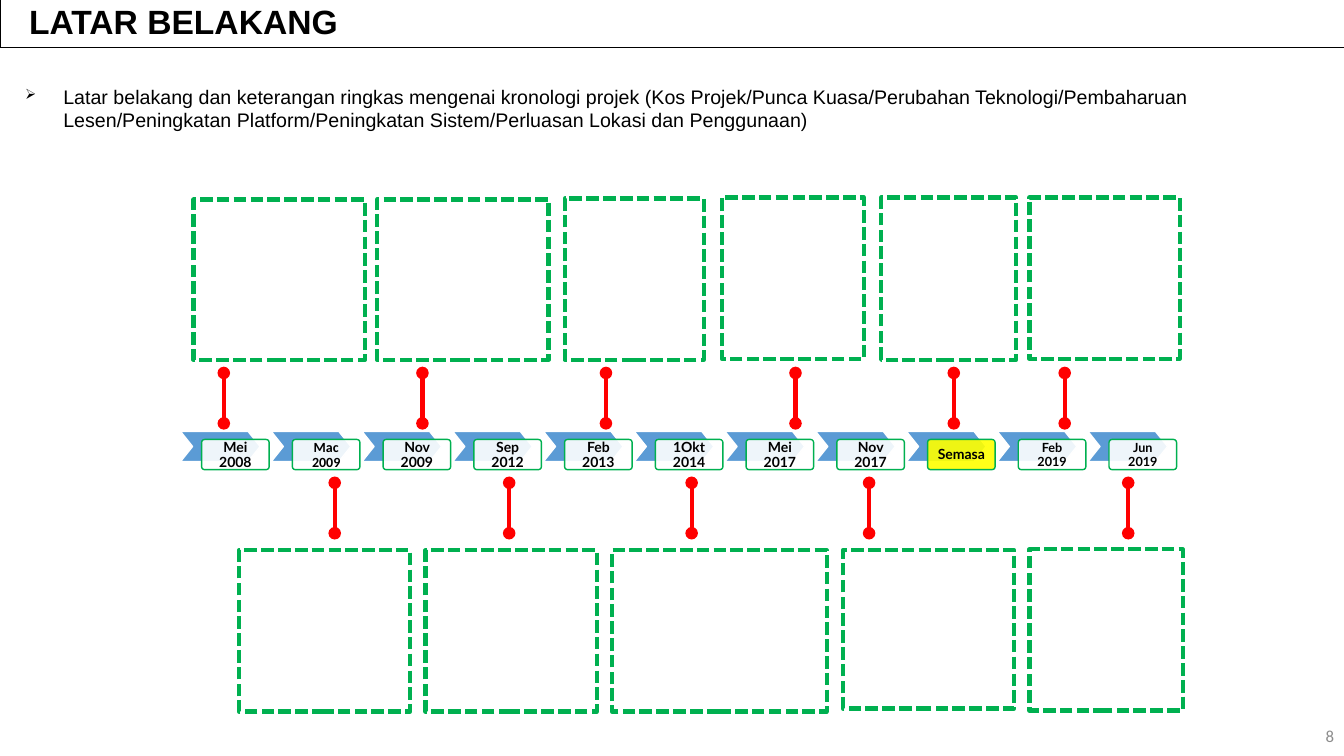
from dataclasses import dataclass
from lxml import etree
from pptx import Presentation
from pptx.dml.color import RGBColor as RGB
from pptx.enum.dml import MSO_LINE
from pptx.enum.shapes import MSO_CONNECTOR, MSO_SHAPE
from pptx.enum.text import MSO_ANCHOR as ANCHOR, PP_ALIGN as ALIGN
from pptx.oxml.ns import qn
from pptx.util import Inches, Pt


@dataclass(frozen=True)
class Theme:
    ink: str = "000000"
    paper: str = "FFFFFF"
    chevron: str = "5B9BD5"
    frame: str = "00B050"
    pin: str = "FF0000"
    current: str = "FFFF00"
    muted: str = "8C8C8C"
    heading: str = "Arial"
    label: str = "Lato"
    plain: str = "Calibri"
    title_size: int = 24
    body_size: int = 14
    number_size: int = 12
    step_size: int = 10
    late_size: int = 9


T = Theme()

STEPS = [
    ("Mei 2008", T.label, T.step_size, T.paper),
    ("Mac 2009", T.plain, T.step_size, T.paper),
    ("Nov 2009", T.label, T.step_size, T.paper),
    ("Sep 2012", T.label, T.step_size, T.paper),
    ("Feb 2013", T.label, T.step_size, T.paper),
    ("1Okt 2014", T.label, T.step_size, T.paper),
    ("Mei 2017", T.label, T.step_size, T.paper),
    ("Nov 2017", T.label, T.step_size, T.paper),
    ("Semasa", T.label, T.step_size, T.current),
    ("Feb 2019", T.label, T.late_size, T.paper),
    ("Jun 2019", T.label, T.late_size, T.paper),
]
UPPER_PINS = [2.22, 4.19, 6.01, 7.89, 9.46, 10.56]
LOWER_PINS = [3.32, 5.05, 6.86, 8.62, 11.19]
UPPER_FRAMES = [
    (1.92, 1.98, 1.7, 1.59), (3.74, 1.98, 1.7, 1.59), (5.6, 1.97, 1.38, 1.6),
    (7.16, 1.96, 1.41, 1.6), (8.74, 1.96, 1.34, 1.61), (10.21, 1.96, 1.49, 1.6),
]
LOWER_FRAMES = [
    (2.37, 5.46, 1.7, 1.6), (4.22, 5.46, 1.7, 1.6), (6.07, 5.46, 2.13, 1.6),
    (8.36, 5.46, 1.7, 1.57), (10.21, 5.45, 1.52, 1.6),
]
SUMMARY = (
    "Latar belakang dan keterangan ringkas mengenai kronologi projek "
    "(Kos Projek/Punca Kuasa/Perubahan Teknologi/Pembaharuan "
    "Lesen/Peningkatan Platform/Peningkatan Sistem/Perluasan Lokasi dan Penggunaan)"
)


def add_box(shapes, kind, box, line, width, fill=None):
    sp = shapes.add_shape(kind, *map(Inches, box))
    sp.shadow.inherit = False
    sp.line.color.rgb = RGB.from_string(line)
    sp.line.width = Pt(width)
    if fill:
        sp.fill.solid()
        sp.fill.fore_color.rgb = RGB.from_string(fill)
    else:
        sp.fill.background()
    return sp


def write(sp, text, font, size, color, bold=False, align=ALIGN.LEFT, anchor=ANCHOR.MIDDLE):
    tf = sp.text_frame
    tf.word_wrap = True
    tf.vertical_anchor = anchor
    p = tf.paragraphs[0]
    p.text = text
    p.alignment = align
    f = p.runs[0].font
    f.name, f.size, f.bold = font, Pt(size), bold
    f.color.rgb = RGB.from_string(color)
    return p


def add_text(shapes, box, *args, **kwargs):
    sp = shapes.add_textbox(*map(Inches, box))
    return sp, write(sp, *args, **kwargs)


def set_indent(p, margin, first):
    pPr = p._p.get_or_add_pPr()
    pPr.set("marL", str(Inches(margin)))
    pPr.set("indent", str(Inches(first)))
    return pPr


def add_title(s, box):
    sp = add_box(s.shapes, MSO_SHAPE.RECTANGLE, box, T.ink, 0.75)
    p = write(sp, "LATAR BELAKANG", T.heading, T.title_size, T.ink, bold=True)
    p.line_spacing = 0.9
    set_indent(p, 0.19, 0)


def add_summary(s, box):
    sp, p = add_text(s.shapes, box, SUMMARY, T.heading, T.body_size, T.ink, anchor=ANCHOR.TOP)
    p.space_before = Pt(2.8)
    pPr = set_indent(p, 0.38, -0.38)
    color = etree.SubElement(pPr, qn("a:buClr"))
    etree.SubElement(color, qn("a:srgbClr"), val=T.ink)
    etree.SubElement(pPr, qn("a:buSzPct"), val="73000")
    etree.SubElement(pPr, qn("a:buChar"), char="➢")


def add_step(shapes, box, text, font, size, fill):
    x, y, w, h = box
    chevron = add_box(shapes, MSO_SHAPE.CHEVRON, box, T.paper, 1, T.chevron)
    chevron.adjustments[0] = 0.4
    card = add_box(shapes, MSO_SHAPE.ROUNDED_RECTANGLE,
                   (x + 0.21, y + 0.08, 0.67, h), T.frame, 1, fill)
    card.adjustments[0] = 0.1
    color = card.fill._xPr.find(".//" + qn("a:srgbClr"))
    etree.SubElement(color, qn("a:alpha"), val="90000")
    sp, p = add_text(shapes, (x + 0.22, y + 0.09, 0.65, 0.29), text, font, size, T.ink,
                     bold=True, align=ALIGN.CENTER)
    tf = sp.text_frame
    tf.margin_left = tf.margin_right = tf.margin_top = tf.margin_bottom = Inches(0.07)
    p.line_spacing = 0.9
    p.space_after = Pt(size * 0.35)


def add_timeline(s, box, pitch=0.9, chevron_width=0.79):
    x, y, w, h = box
    group = s.shapes.add_group_shape()
    for i, step in enumerate(STEPS):
        add_step(group.shapes, (x + i * pitch, y, chevron_width, h), *step)


def add_pins(s, xs, top, length=0.5):
    for x in xs:
        pin = s.shapes.add_connector(MSO_CONNECTOR.STRAIGHT, Inches(x), Inches(top),
                                     Inches(x), Inches(top + length))
        pin.line.color.rgb = RGB.from_string(T.pin)
        pin.line.width = Pt(3)
        ln = pin.line._get_or_add_ln()
        for end in ("a:headEnd", "a:tailEnd"):
            etree.SubElement(ln, qn(end), type="oval")
        etree.SubElement(pin._element.spPr, qn("a:effectLst"))


def add_frames(s, boxes):
    for box in boxes:
        sp = add_box(s.shapes, MSO_SHAPE.RECTANGLE, box, T.frame, 3)
        sp.line.dash_style = MSO_LINE.SQUARE_DOT


def add_slide_number(s, box):
    add_text(s.shapes, box, "8", T.plain, T.number_size, T.muted, align=ALIGN.RIGHT)


def main():
    prs = Presentation()
    prs.slide_width, prs.slide_height = Inches(13.33), Inches(7.5)
    s = prs.slides.add_slide(prs.slide_layouts[6])
    add_timeline(s, (1.79, 4.28, 9.88, 0.3))
    add_pins(s, UPPER_PINS, 3.7)
    add_pins(s, LOWER_PINS, 4.79)
    add_frames(s, UPPER_FRAMES + LOWER_FRAMES)
    add_title(s, (0, 0, 13.35, 0.47))
    add_summary(s, (0.15, 0.79, 13, 6.56))
    add_slide_number(s, (10.33, 7.1, 3, 0.4))
    prs.save("out.pptx")


if __name__ == "__main__":
    main()
